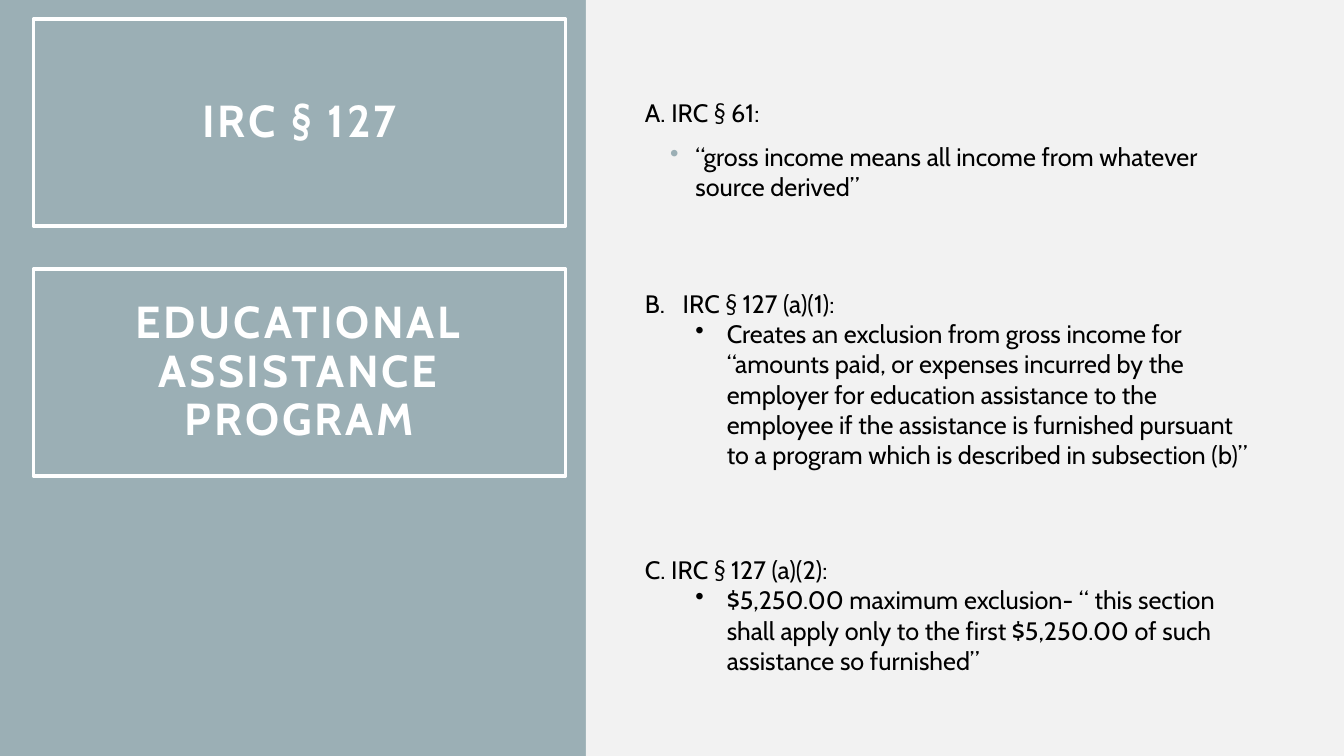
from dataclasses import dataclass

from lxml.etree import SubElement
from pptx import Presentation
from pptx.dml.color import RGBColor
from pptx.enum.shapes import MSO_SHAPE
from pptx.enum.text import MSO_ANCHOR, PP_ALIGN
from pptx.oxml.ns import qn
from pptx.util import Pt

# Content
HEADINGS = ["IRC § 127", "EDUCATIONAL ASSISTANCE PROGRAM"]
SECTIONS = [
    {"heading": "A. IRC § 61:",
     "detail": "“gross income means all income from whatever source derived”",
     "top": 63.4, "width": 426.2, "height": 86.4, "anchor": MSO_ANCHOR.MIDDLE,
     "indent": (36, -18), "gap": 10, "bullet_color": "9BAFB5"},
    {"heading": "IRC § 127 (a)(1):", "number_from": 2,
     "detail": "Creates an exclusion from gross income for “amounts paid, or "
               "expenses incurred by the employer for education assistance to "
               "the employee if the assistance is furnished pursuant to a "
               "program which is described in subsection (b)”",
     "top": 202.3, "width": 448.6, "height": 138.2},
    {"heading": "C. IRC § 127 (a)(2):",
     "detail": "$5,250.00 maximum exclusion- “ this section shall apply only to "
               "the first $5,250.00 of such assistance so furnished”",
     "top": 392.4, "width": 448.6, "height": 94.3},
]


@dataclass(frozen=True)
class Theme:
    font: str = "Cabin"
    heading_size: int = 32
    body_size: int = 18
    backdrop: str = "9BAFB5"
    panel: str = "F2F2F2"
    light: str = "FFFFFF"
    dark: str = "000000"


THEME = Theme()
SLIDE_WIDTH, SLIDE_HEIGHT = 960, 540
PANEL_LEFT = 418.5
SECTION_LEFT = 453.6
FRAME_LEFT, FRAME_TOP, FRAME_WIDTH, FRAME_HEIGHT = 23.8, 13.7, 380.2, 147.6
FRAME_STEP = 178.6
FRAME_INSET = 14.4


def color(value):
    return RGBColor.from_string(value)


def add_text(paragraph, text, size, ink, bold=False):
    run = paragraph.add_run()
    run.text = text
    run.font.name = THEME.font
    run.font.size = Pt(size)
    run.font.bold = bold
    run.font.color.rgb = color(ink)
    return run


def add_rectangle(slide, left, top, width, height):
    rectangle = slide.shapes.add_shape(
        MSO_SHAPE.RECTANGLE, Pt(left), Pt(top), Pt(width), Pt(height))
    rectangle.shadow.inherit = False
    return rectangle


def set_indent(paragraph, margin, first_line):
    properties = paragraph._p.get_or_add_pPr()
    properties.set("marL", str(Pt(margin)))
    properties.set("indent", str(Pt(first_line)))
    return properties


def add_heading_frame(slide, text, top):
    frame = add_rectangle(slide, FRAME_LEFT, top, FRAME_WIDTH, FRAME_HEIGHT)
    frame.fill.background()
    frame.line.color.rgb = color(THEME.light)
    frame.line.width = Pt(2.5)
    body = frame.text_frame
    body.word_wrap = True
    body.vertical_anchor = MSO_ANCHOR.MIDDLE
    body.margin_left = body.margin_right = Pt(FRAME_INSET)
    body.margin_top = body.margin_bottom = Pt(FRAME_INSET)
    paragraph = body.paragraphs[0]
    paragraph.alignment = PP_ALIGN.CENTER
    paragraph.line_spacing = 0.9
    run = add_text(paragraph, text, THEME.heading_size, THEME.light, bold=True)
    run._r.get_or_add_rPr().set("spc", "200")


def add_section(slide, section):
    box = slide.shapes.add_textbox(
        Pt(SECTION_LEFT), Pt(section["top"]),
        Pt(section["width"]), Pt(section["height"]))
    body = box.text_frame
    body.word_wrap = True
    body.vertical_anchor = section.get("anchor", MSO_ANCHOR.TOP)

    # Lettered heading
    heading = body.paragraphs[0]
    if "number_from" in section:
        properties = set_indent(heading, 27, -27)
        SubElement(properties, qn("a:buAutoNum"), type="alphaUcPeriod",
                   startAt=str(section["number_from"]))
    add_text(heading, section["heading"], THEME.body_size, THEME.dark)

    # Bulleted detail
    detail = body.add_paragraph()
    detail.level = 1
    properties = set_indent(detail, *section.get("indent", (58.5, -22.5)))
    bullet_color = SubElement(properties, qn("a:buClr"))
    SubElement(bullet_color, qn("a:srgbClr"),
               val=section.get("bullet_color", THEME.dark))
    SubElement(properties, qn("a:buChar"), char="•")
    detail.space_before = Pt(section.get("gap", 0))
    add_text(detail, section["detail"], THEME.body_size, THEME.dark)


def main():
    deck = Presentation()
    deck.slide_width, deck.slide_height = Pt(SLIDE_WIDTH), Pt(SLIDE_HEIGHT)
    slide = deck.slides.add_slide(deck.slide_layouts[6])
    slide.background.fill.solid()
    slide.background.fill.fore_color.rgb = color(THEME.backdrop)

    # Right panel
    panel = add_rectangle(slide, PANEL_LEFT, 0, SLIDE_WIDTH - PANEL_LEFT, SLIDE_HEIGHT)
    panel.fill.solid()
    panel.fill.fore_color.rgb = color(THEME.panel)
    panel.line.fill.background()

    # Framed headings
    for index, heading in enumerate(HEADINGS):
        add_heading_frame(slide, heading, FRAME_TOP + index * FRAME_STEP)

    # Code sections
    for section in SECTIONS:
        add_section(slide, section)

    deck.save("out.pptx")


if __name__ == "__main__":
    main()
